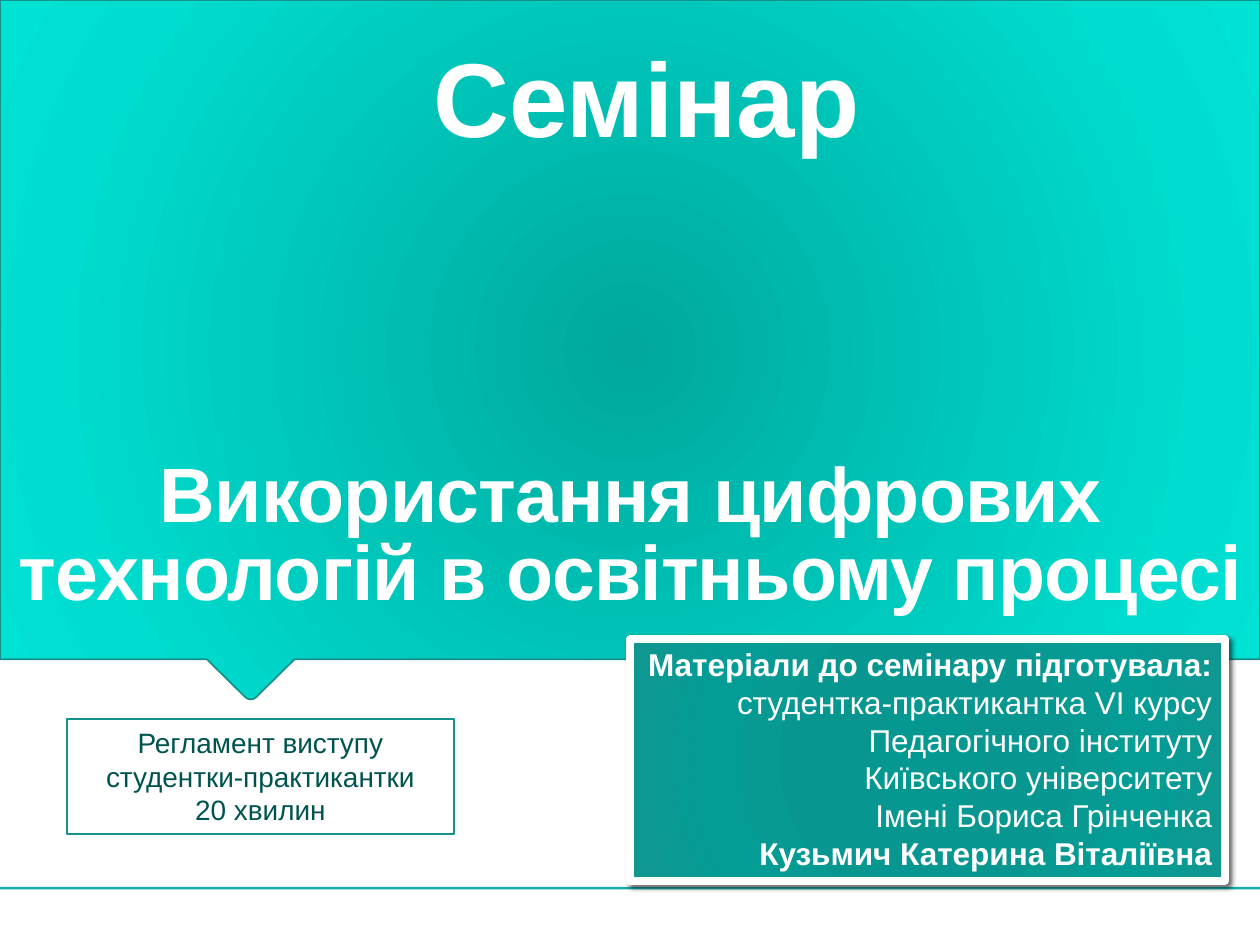
from lxml import etree
from pptx import Presentation
from pptx.dml.color import RGBColor
from pptx.enum.shapes import MSO_SHAPE as Kind
from pptx.enum.text import MSO_ANCHOR as Anchor, MSO_AUTO_SIZE as Fit, PP_ALIGN as Align
from pptx.oxml import parse_xml
from pptx.oxml.ns import nsdecls, qn
from pptx.util import Cm, Pt

WHITE, TEAL = "FFFFFF", "17918B"


def color(code):
    return RGBColor.from_string(code)


def paint(shape, fill=None, line=None, width=1):
    shape.shadow.inherit = False
    if fill:
        shape.fill.solid()
        shape.fill.fore_color.rgb = color(fill)
    if line:
        shape.line.color.rgb = color(line)
        shape.line.width = Pt(width)
    else:
        shape.line.fill.background()


def radial(shape, stops, edge):
    """Fill with a circular gradient; stops are (percent, colour)."""
    marks = "".join(
        f'<a:gs pos="{pos * 1000}"><a:srgbClr val="{code}"/></a:gs>'
        for pos, code in stops)
    rect = " ".join(f'{side}="{edge * 1000}"' for side in "ltrb")
    grad = parse_xml(
        f'<a:gradFill {nsdecls("a")} rotWithShape="1"><a:gsLst>{marks}</a:gsLst>'
        f'<a:path path="circle"><a:fillToRect {rect}/></a:path></a:gradFill>')
    shape.fill.solid()
    old = shape.fill._xPr.find(qn("a:solidFill"))
    old.getparent().replace(old, grad)


def shade(shape, blur, dist, angle, alpha):
    """Add an outer black shadow."""
    effects = shape._element.spPr.find(qn("a:effectLst"))
    outer = etree.SubElement(
        effects, qn("a:outerShdw"), blurRad=str(Pt(blur)), dist=str(Pt(dist)),
        dir=str(angle * 60000), algn="tl", rotWithShape="0")
    tint = etree.SubElement(outer, qn("a:srgbClr"), val="000000")
    etree.SubElement(tint, qn("a:alpha"), val=str(alpha * 1000))


def write(shape, lines, size, code=WHITE, align=Align.CENTER, bold=(),
          wrap=True, anchor=Anchor.TOP, fit=Fit.SHAPE_TO_FIT_TEXT):
    """Set one paragraph per line; bold lists the bold line numbers."""
    frame = shape.text_frame
    frame.text = "\n".join(lines)
    frame.word_wrap = wrap
    frame.vertical_anchor = anchor
    frame.auto_size = fit
    for num, para in enumerate(frame.paragraphs):
        para.alignment = align
        for run in para.runs:
            run.font.name = "Arial"
            run.font.size = Pt(size)
            run.font.bold = num in bold
            run.font.color.rgb = color(code)
    return frame


def box(shapes, x, y, w, h):
    return shapes.add_shape(Kind.RECTANGLE, Cm(x), Cm(y), Cm(w), Cm(h))


def label(shapes, x, y, w, h):
    return shapes.add_textbox(Cm(x), Cm(y), Cm(w), Cm(h))


def banner(shapes):
    """Full-width panel with a rounded pointer below its edge."""
    points = [(0, 0), (0, 13.29), (4.17, 13.29), (4.95, 14.06), (5, 14.09),
              (5.05, 14.1), (5.11, 14.09), (5.16, 14.06), (5.94, 13.29),
              (25.4, 13.29)]
    pen = shapes.build_freeform(Cm(25.4), 0)
    pen.add_line_segments([(Cm(x), Cm(y)) for x, y in points], close=True)
    panel = pen.convert_to_shape()
    paint(panel, line=TEAL)
    radial(panel, [(0, "00A89D"), (80, "00DCCF"), (100, "00E2D4")], 50)


def main():
    deck = Presentation()
    deck.slide_width, deck.slide_height = Cm(25.4), Cm(19.05)
    shapes = deck.slides.add_slide(deck.slide_layouts[6]).shapes

    # Background parts
    paint(box(shapes, 0, 17.88, 25.4, 0.05), "1AACA6")
    banner(shapes)

    # Title and heading
    title = write(label(shapes, 0, 4.29, 25.4, 8.26),
                  ["Використання цифрових технологій в освітньому процесі"],
                  44, bold=[0], anchor=Anchor.BOTTOM, fit=Fit.NONE)
    para = title.paragraphs[0]
    para.line_spacing = 0.85
    para.runs[0].font._element.set("spc", "-50")
    write(label(shapes, 6.93, 0.53, 12.8, 2.82), ["Семінар "], 60, bold=[0])

    # Author card
    card = box(shapes, 12.7, 12.88, 11.99, 4.88)
    paint(card, line=WHITE, width=4.5)
    radial(card, [(0, "049891"), (34, "079790"), (70, "049C95"),
                  (100, "119790")], 100)
    shade(card, 3, 2, 45, 60)
    write(card, ["Матеріали до семінару підготувала:",
                 "студентка-практикантка VI курсу",
                 "Педагогічного інституту",
                 "Київського університету",
                 "Імені Бориса Грінченка",
                 "Кузьмич Катерина Віталіївна"],
          18, align=Align.RIGHT, bold=[0, 5], wrap=False)

    # Time limit
    note = box(shapes, 1.35, 14.5, 7.8, 2.31)
    paint(note, WHITE, TEAL, 1.25)
    write(note, ["Регламент виступу студентки-практикантки", "20 хвилин"],
          16, "005450")

    deck.save("out.pptx")


if __name__ == "__main__":
    main()
